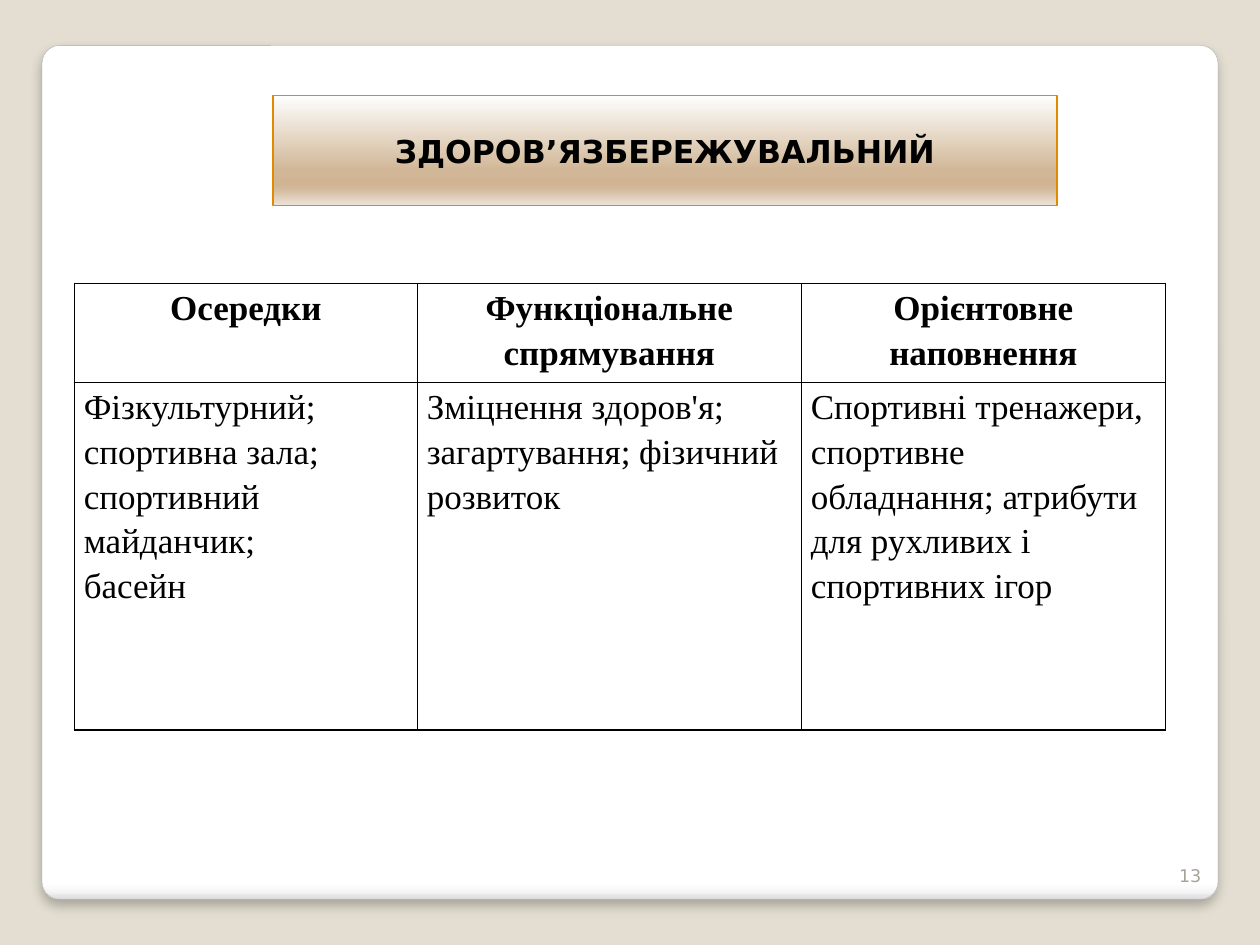
from typing import NamedTuple

from lxml import etree
from pptx import Presentation
from pptx import util as u
from pptx.dml.color import RGBColor
from pptx.enum import shapes, text
from pptx.oxml.ns import qn

Pt = u.Pt
SANS, SERIF = "DejaVu Sans", "Times New Roman"
CENTER, LEFT, RIGHT = text.PP_ALIGN.CENTER, text.PP_ALIGN.LEFT, text.PP_ALIGN.RIGHT


class Box(NamedTuple):
    left: float
    top: float
    width: float
    height: float

    def lengths(self) -> list:
        return [Pt(v) for v in self]


class Style(NamedTuple):
    font: str
    size: float
    color: str = "000000"
    bold: bool = False
    align: text.PP_ALIGN = LEFT
    spacing: float = 1.0


class Column(NamedTuple):
    width: float
    heading: str
    items: list


TITLE = Style(SANS, 18, bold=True, align=CENTER)
HEADING = Style(SERIF, 20, bold=True, align=CENTER, spacing=1.15)
BODY = Style(SERIF, 20, spacing=1.15)
PAGE_NUMBER = Style(SANS, 10, "A8A49B", align=RIGHT)

PANEL_STOPS = [(0, "FFFFFF"), (98, "FFFFFF"), (99, "F7F7F7"), (100, "DADADA")]
BANNER_STOPS = [(0, "FEFEFE"), (68, "D1B797"), (81, "D0B493"),
                (86, "D4BB9E"), (100, "ECE2D8")]

ROW_HEIGHTS = [56.7, 198.5]
COLUMNS = [
    Column(196, "Осередки",
           ["Фізкультурний;", "спортивна зала;", "спортивний майданчик;", "басейн"]),
    Column(219.5, "Функціональне спрямування",
           ["Зміцнення здоров'я; загартування; фізичний розвиток"]),
    Column(208, "Орієнтовне наповнення",
           ["Спортивні тренажери, спортивне обладнання; "
            "атрибути для рухливих і спортивних ігор"]),
]


def rgb(value: str) -> RGBColor:
    return RGBColor.from_string(value)


def add_color(parent, value: str):
    return etree.SubElement(parent, qn("a:srgbClr"), val=value)


def write(tf, lines: list, style: Style) -> None:
    tf.word_wrap = True
    for i, line in enumerate(lines):
        p = tf.paragraphs[0] if i == 0 else tf.add_paragraph()
        p.alignment, p.line_spacing = style.align, style.spacing
        r = p.add_run()
        r.text = line
        r.font.name, r.font.size, r.font.bold = style.font, Pt(style.size), style.bold
        r.font.color.rgb = rgb(style.color)


def add_gradient_shape(s, kind, box: Box, stops: list, line: str, line_width: float):
    """Add a shape whose gradient runs from top to bottom."""
    sp = s.shapes.add_shape(kind, *box.lengths())
    sp.shadow.inherit = False
    sp.line.color.rgb, sp.line.width = rgb(line), Pt(line_width)
    sp.fill.gradient()
    sp.fill.gradient_angle = 270
    stop_list = sp._element.spPr.find(".//" + qn("a:gsLst"))
    for old in list(stop_list):
        stop_list.remove(old)
    for position, value in stops:
        add_color(etree.SubElement(stop_list, qn("a:gs"), pos=str(position * 1000)), value)
    return sp


def add_soft_shadow(sp, blur: float, distance: float, opacity: int) -> None:
    effects = sp._element.spPr.find(qn("a:effectLst"))
    shadow = etree.SubElement(effects, qn("a:outerShdw"), blurRad=str(Pt(blur)),
                              dist=str(Pt(distance)), dir="5400000", rotWithShape="0")
    etree.SubElement(add_color(shadow, "000000"), qn("a:alpha"), val=str(opacity * 1000))


def set_borders(cell, width: float) -> None:
    tc_pr = cell._tc.get_or_add_tcPr()
    for i, side in enumerate(("lnL", "lnR", "lnT", "lnB")):
        ln = etree.Element(qn("a:" + side), w=str(Pt(width)))
        add_color(etree.SubElement(ln, qn("a:solidFill")), "000000")
        tc_pr.insert(i, ln)


def fill_cell(cell, lines: list, style: Style) -> None:
    cell.fill.background()
    set_borders(cell, 1)
    cell.margin_left = cell.margin_right = Pt(5.4)
    cell.margin_top = cell.margin_bottom = Pt(0)
    write(cell.text_frame, lines, style)


def add_centre_table(s, left: float, top: float) -> None:
    box = Box(left, top, sum(c.width for c in COLUMNS), sum(ROW_HEIGHTS))
    table = s.shapes.add_table(len(ROW_HEIGHTS), len(COLUMNS), *box.lengths()).table
    for row, height in zip(table.rows, ROW_HEIGHTS):
        row.height = Pt(height)
    for i, column in enumerate(COLUMNS):
        table.columns[i].width = Pt(column.width)
        fill_cell(table.cell(0, i), [column.heading], HEADING)
        fill_cell(table.cell(1, i), column.items, BODY)


def main() -> None:
    prs = Presentation()
    prs.slide_width, prs.slide_height = Pt(720), Pt(540)
    s = prs.slides.add_slide(prs.slide_layouts[6])
    s.background.fill.solid()
    s.background.fill.fore_color.rgb = rgb("E3DED1")

    panel = add_gradient_shape(s, shapes.MSO_SHAPE.ROUNDED_RECTANGLE,
                               Box(24, 26, 672, 488), PANEL_STOPS, "A4A4A4", 0.16)
    panel.adjustments[0] = 0.021
    add_soft_shadow(panel, blur=6, distance=4, opacity=25)

    add_centre_table(s, 42.5, 162)

    banner = add_gradient_shape(s, shapes.MSO_SHAPE.RECTANGLE,
                                Box(156, 54.7, 448, 62.6), BANNER_STOPS, "E28900", 0.75)
    banner.text_frame.vertical_anchor = text.MSO_ANCHOR.MIDDLE
    write(banner.text_frame, ["ЗДОРОВ’ЯЗБЕРЕЖУВАЛЬНИЙ"], TITLE)

    number = s.shapes.add_textbox(*Box(657.5, 481, 36, 28.8).lengths())
    number.text_frame.vertical_anchor = text.MSO_ANCHOR.BOTTOM
    write(number.text_frame, ["13"], PAGE_NUMBER)

    prs.save("out.pptx")


if __name__ == "__main__":
    main()
